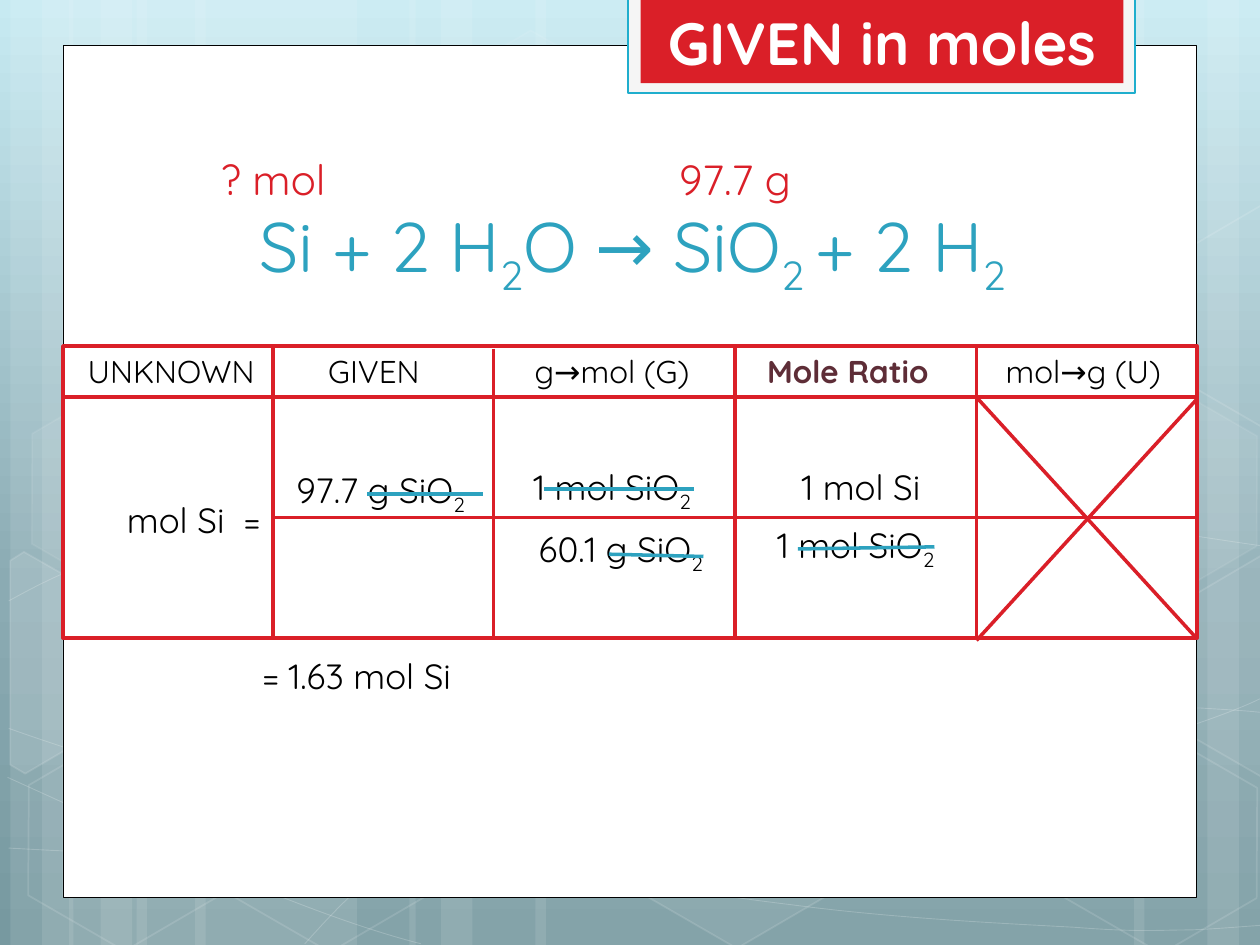
from copy import deepcopy
from lxml.etree import SubElement
from pptx import Presentation
from pptx.dml.color import RGBColor
from pptx.enum.shapes import MSO_CONNECTOR, MSO_SHAPE
from pptx.enum.text import MSO_ANCHOR, MSO_AUTO_SIZE, PP_ALIGN
from pptx.oxml.ns import qn
from pptx.util import Pt

FONT = "Quicksand"
RED, BLUE, BLACK, WHITE = "DA1F28", "2DA2BF", "000000", "FFFFFF"
LEFT, CENTER, RIGHT = PP_ALIGN.LEFT, PP_ALIGN.CENTER, PP_ALIGN.RIGHT
GRID_LEFT, GRID_RIGHT = 36, 684
HEADER_TOP, HEADER_BOTTOM, GRID_MIDDLE, GRID_BOTTOM = 197.7, 226.8, 295.7, 364.7

STRIPES = [(78, 126), (6, 36), (24, 60), (111.5, 126), (39.5, 36), (57.5, 60),
           (528, 126), (690, 36), (648, 60), (306, 222), (234, 36), (252, 60)]
CURVES = [
    [(5, 484.6), (43.9, 486.7), (82.8, 488.9), (136.8, 488.2), (190.8, 487.4),
     (257.8, 486), (329.8, 478.8), (401.8, 471.6), (504, 457.9), (570.2, 444.2),
     (635.8, 430.6), (703.4, 409), (725, 396.7)],
    [(5, 343.4), (25.9, 331.9), (46.8, 321.1), (87.1, 310.3), (128.2, 299.5),
     (186.5, 283.7), (249.8, 278.6), (313.9, 273.6), (391.7, 272.9), (470.9, 278.6),
     (550.1, 284.4), (681.8, 306.7), (725, 312.5)],
    [(4.3, 444.2), (91.4, 483.8), (177.8, 523.4), (240.5, 539.3)],
    [(5, 416.2), (27.4, 424.1), (50.4, 432), (92.2, 443.5), (133.9, 454.3),
     (196.6, 472.3), (257, 484.6), (316.8, 496.8), (392.4, 509.8), (452.2, 517),
     (511.9, 524.9), (576, 527.8), (614.2, 529.9), (651.6, 532.8), (661.7, 531.4),
     (680.4, 531.4), (699.1, 530.6), (712.1, 529.2), (725, 528.5)],
    [(174.2, 539.3), (187.2, 524.9), (200.2, 510.5), (217.4, 497.5), (234.7, 484.6),
     (259.2, 470.2), (279.4, 460.1), (299.5, 450), (311.8, 445.7), (338.4, 438.5),
     (364.3, 431.3), (412.6, 421.2), (437.8, 416.2), (463.7, 411.1), (467.3, 411.1),
     (489.6, 409.7), (511.9, 407.5), (547.2, 405.4), (571.7, 404.6), (596.9, 403.9),
     (637.9, 404.6), (637.9, 404.6), (654, 404.6), (670, 404.6), (686.2, 404.6),
     (699.1, 405.4), (711.4, 406.1), (717.8, 406.8), (724.3, 407.5), (722.2, 406.8),
     (724.3, 407.5)],
]
HEXAGONS = [(240.5, 26, 4, 8), (357.8, 424, 6, 12), (8, 425.5, 0, 12),
            (10, 224.6, 7, 8), (125.3, 426.2, 0, 12), (542.2, 326.2, 10, 12),
            (600.5, 427, 0, 12), (600.5, 226, 7, 8)]
CUT_HEXAGONS = [
    ([(5.8, 320.4), (13.7, 315.4), (69.1, 347), (68.4, 410.4), (14.4, 442.1),
      (5.8, 437)], 10),
    ([(666.7, 349.2), (720.7, 317.5), (726.5, 321.1), (726.5, 441.4), (721.4, 444.2),
      (666.7, 412.6)], 4),
    ([(666.7, 149), (720.7, 117.4), (727.2, 121), (726.5, 241.2), (721.4, 244.1),
      (666.7, 212.4)], 0),
]


def rgb(value):
    return RGBColor.from_string(value)


def paint(fill, color, alpha=100):
    if not color or not alpha:
        fill.background()
        return
    fill.solid()
    fill.fore_color.rgb = rgb(color)
    if alpha < 100:
        clr = fill._xPr.find(f"{qn('a:solidFill')}/{qn('a:srgbClr')}")
        SubElement(clr, qn("a:alpha"), val=str(alpha * 1000))


def style(sp, fill=None, alpha=100, line=None, width=1, line_alpha=100):
    sp.shadow.inherit = False
    paint(sp.fill, fill, alpha)
    paint(sp.line.fill, line, line_alpha)
    if line:
        sp.line.width = Pt(width)


def box(s, x, y, w, h, shape=MSO_SHAPE.RECTANGLE, **look):
    sp = s.shapes.add_shape(shape, Pt(x), Pt(y), Pt(w), Pt(h))
    style(sp, **look)
    return sp


def outline(s, points, close, **look):
    pts = [(Pt(x), Pt(y)) for x, y in points]
    fb = s.shapes.build_freeform(*pts[0])
    fb.add_line_segments(pts[1:], close=close)
    sp = fb.convert_to_shape()
    style(sp, **look)
    return sp


def curve(s, points, **look):
    sp = outline(s, points, False, **look)
    segments = list(sp._element.iter(qn("a:lnTo")))
    for i in range(0, len(segments), 3):
        bezier = SubElement(segments[i].getparent(), qn("a:cubicBezTo"))
        for segment in segments[i:i + 3]:
            segment.getparent().remove(segment)
            bezier.append(segment[0])


def line(s, x1, y1, x2, y2, color=RED):
    ln = s.shapes.add_connector(MSO_CONNECTOR.STRAIGHT, Pt(x1), Pt(y1), Pt(x2), Pt(y2))
    ln.line.color.rgb = rgb(color)
    ln.line.width = Pt(2)
    SubElement(ln._element.spPr, qn("a:effectLst"))


def run(p, text, size, color, bold=False, subscript=False):
    r = p.add_run()
    r.text = text
    r.font.name = FONT
    r.font.size = Pt(size)
    r.font.bold = bold
    r.font.color.rgb = rgb(color)
    if subscript:
        r._r.get_or_add_rPr().set("baseline", "-25000")


def formula(p, text, size, color, bold=False):
    for i, part in enumerate(text.split("_")):
        if part:
            run(p, part, size, color, bold, subscript=i % 2 == 1)


def label(s, x, y, w, h, text="", size=20, color=BLACK, align=CENTER, bold=False):
    sp = s.shapes.add_textbox(Pt(x), Pt(y), Pt(w), Pt(h))
    tf = sp.text_frame
    tf.word_wrap = True
    tf.auto_size = MSO_AUTO_SIZE.SHAPE_TO_FIT_TEXT
    p = tf.paragraphs[0]
    p.alignment = align
    formula(p, text, size, color, bold)
    return sp


def backdrop(s):
    fill = s.background.fill
    fill.gradient()
    fill.gradient_angle = 270
    stops = s._element.find(f".//{qn('a:gsLst')}")
    stops.insert(1, deepcopy(stops[0]))
    for stop, (pos, color) in zip(
            fill.gradient_stops, [(0, "C7EAF2"), (0.62, "8BABB3"), (1, "7799A0")]):
        stop.position = pos
        stop.color.rgb = rgb(color)
    for x, w in STRIPES:
        box(s, x, 0, w, 540, fill=WHITE, alpha=10)
    for points in CURVES:
        curve(s, points, line=WHITE, width=0.5, line_alpha=20)
    for x, y, alpha, line_alpha in HEXAGONS:
        sp = box(s, x, y, 126, 109.4, MSO_SHAPE.HEXAGON, fill=WHITE, alpha=alpha,
                 line=WHITE, line_alpha=line_alpha)
        sp.adjustments[0] = 0.285
        sp.rotation = 30
    for points, alpha in CUT_HEXAGONS:
        outline(s, points, True, fill=WHITE, alpha=alpha, line=WHITE, line_alpha=12)
    box(s, 36, 26, 648, 487, fill=WHITE, line=BLACK, width=0.5)
    box(s, 359, -1.5, 289.5, 54.5, fill="F5F5F5", line="1FAECD", width=1.25)
    box(s, 366, -1.5, 276, 49, fill=RED)


def equation(s):
    sp = s.shapes.title
    s.shapes._spTree.append(sp._element)
    sp.left, sp.top, sp.width, sp.height = Pt(82.4), Pt(84.2), Pt(553), Pt(90)
    tf = sp.text_frame
    tf.word_wrap = True
    tf.auto_size = MSO_AUTO_SIZE.NONE
    tf.vertical_anchor = MSO_ANCHOR.BOTTOM
    p = tf.paragraphs[0]
    p.alignment = CENTER
    p.space_after = Pt(12)
    p._p.get_or_add_pPr().set("marL", str(Pt(5)))
    formula(p, "Si + 2 H_2_O → SiO_2 _+ 2 H_2", 40, BLUE)


def header(s):
    sp = label(s, GRID_LEFT, HEADER_TOP, GRID_RIGHT - GRID_LEFT,
               HEADER_BOTTOM - HEADER_TOP, align=LEFT)
    style(sp, line=RED, width=2)
    p = sp.text_frame.paragraphs[0]
    tabs = SubElement(p._p.get_or_add_pPr(), qn("a:tabLst"))
    for pos in (54.7, 170.6, 306.7, 441.4, 576):
        SubElement(tabs, qn("a:tab"), pos=str(Pt(pos)), algn="ctr")
    run(p, "\tUNKNOWN\tGIVEN\tg→mol (G)\t", 18, BLACK)
    run(p, "Mole Ratio\t", 18, "5E2D37", bold=True)
    run(p, "mol→g (U)", 18, BLACK)


def grid(s):
    box(s, GRID_LEFT, HEADER_BOTTOM, GRID_RIGHT - GRID_LEFT,
        GRID_BOTTOM - HEADER_BOTTOM, line=RED, width=2)
    header(s)
    for x, drop in [(156, 0), (558, 0), (420, 0), (282, 1.5)]:
        line(s, x, HEADER_TOP + drop, x, GRID_BOTTOM + drop / 2)
    line(s, 156, GRID_MIDDLE, GRID_RIGHT, GRID_MIDDLE)


def main():
    prs = Presentation()
    prs.slide_width, prs.slide_height = Pt(720), Pt(540)
    s = prs.slides.add_slide(prs.slide_layouts[5])
    backdrop(s)
    equation(s)
    grid(s)
    label(s, 36, 281.2, 120, 31.5, "mol Si  =", align=RIGHT)
    for x, y, w, text in [(142.5, 264.2, 150, "97.7 g SiO_2"), (426, 262.7, 132, "1 mol Si"),
                          (429, 295.7, 120, "1 mol SiO_2"), (286.8, 262.7, 126, "1 mol SiO_2"),
                          (284.5, 298, 135, " 60.1 g SiO_2")]:
        label(s, x, y, w, 31.5, text)
    label(s, 142.8, 370.6, 166, 31.5, "= 1.63 mol Si", align=LEFT)
    for ends in [(210, 282.3, 276, 282.3), (456, 313.7, 534, 312.5),
                 (311, 279.3, 396.7, 279.3), (348, 316.7, 402, 318)]:
        line(s, *ends, color=BLUE)
    label(s, 366, 0, 276, 48, "GIVEN in moles", 34, WHITE, bold=True)
    label(s, 378, 84, 84, 36, "97.7 g", 24, RED)
    label(s, 96, 84, 120, 36, "? mol", 24, RED)
    line(s, 558, 227, 684, 365)
    line(s, 684, 228, 558, 366)
    prs.save("out.pptx")


if __name__ == "__main__":
    main()
